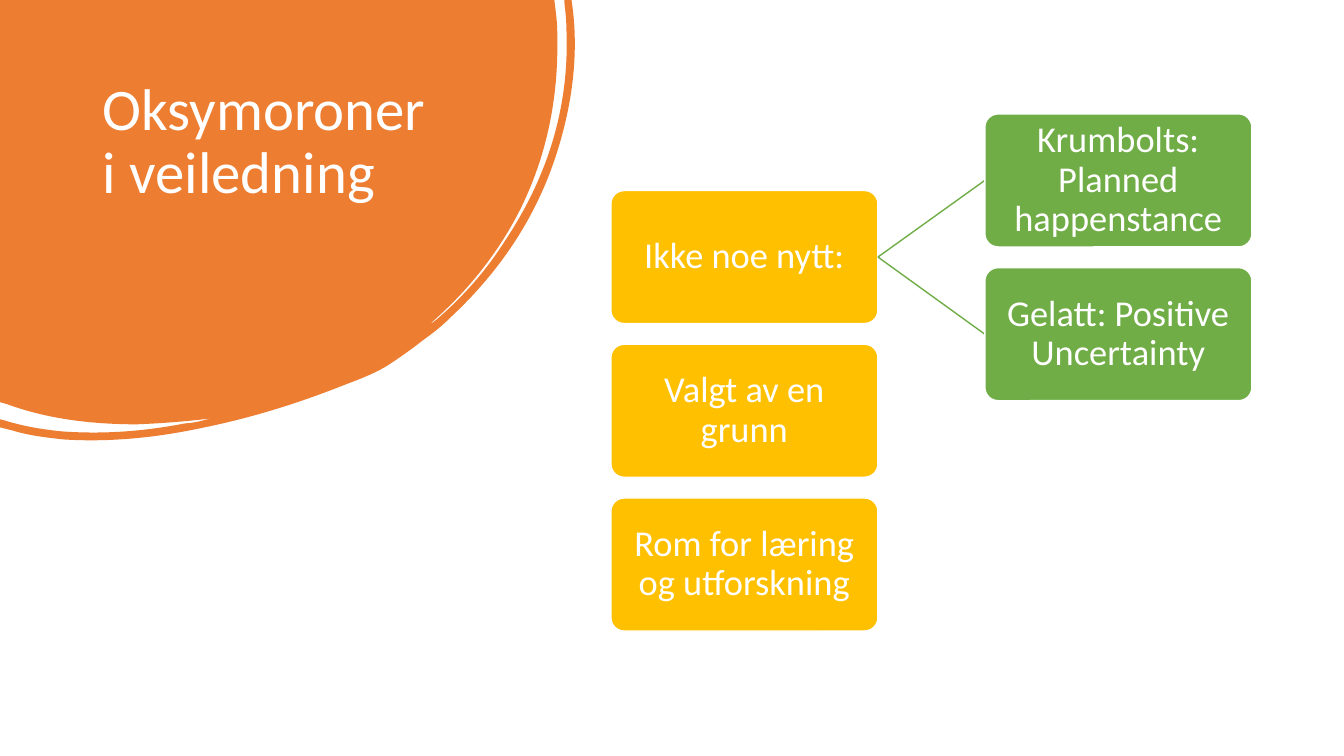
from lxml.etree import SubElement
from pptx import Presentation
from pptx.dml.color import RGBColor
from pptx.enum.shapes import MSO_CONNECTOR, MSO_SHAPE
from pptx.enum.text import MSO_ANCHOR as Anchor, MSO_AUTO_SIZE as AutoSize, PP_ALIGN as Align
from pptx.oxml.ns import qn
from pptx.util import Pt

PX = 9144  # EMU per px, 100 px to the inch
FONT = "Calibri"
WHITE = RGBColor(0xFF, 0xFF, 0xFF)
ORANGE = RGBColor(0xED, 0x7D, 0x31)
YELLOW = RGBColor(0xFF, 0xC0, 0x00)
GREEN = RGBColor(0x70, 0xAD, 0x47)

BOX_WIDTH, BOX_HEIGHT = 265, 132
TOPIC_LEFT, TOPIC_TOP, LAST_TOPIC_TOP = 606, 189, 494
EXAMPLE_LEFT, EXAMPLE_TOP = 977, 113
TOPICS = ["Ikke noe nytt:", "Valgt av en grunn", "Rom for læring og utforskning"]
EXAMPLES = ["Krumbolts: Planned happenstance", "Gelatt: Positive Uncertainty"]
ROW_PITCH = (LAST_TOPIC_TOP - TOPIC_TOP) / (len(TOPICS) - 1)

# Each step is one point (a line) or three points (a cubic curve).
BLOB_SIZE = (571, 437)
BLOB_START = (0, 0)
BLOB_STEPS = [
    [(550, 0)],
    [(552, 17)],
    [(553, 26), (553, 36), (553, 45)],
    [(553, 101), (542, 154), (518, 204)],
    [(496, 249), (465, 288), (427, 321)],
    [(429, 321), (430, 319), (432, 318)],
    [(459, 295), (482, 269), (501, 239)],
    [(543, 176), (565, 107), (562, 30)],
    [(562, 21), (561, 12), (560, 3)],
    [(560, 0)],
    [(567, 0)],
    [(568, 7)],
    [(574, 54), (568, 102), (553, 150)],
    [(533, 214), (497, 268), (448, 314)],
    [(439, 323), (429, 331), (419, 338)],
    [(409, 346), (399, 353), (387, 361)],
    [(375, 369), (360, 375), (344, 381)],
    [(299, 399), (252, 414), (203, 424)],
    [(157, 434), (110, 439), (63, 436)],
    [(45, 434), (28, 432), (12, 427)],
    [(0, 424)],
    [(0, 416)],
    [(4, 417)],
    [(23, 423), (42, 426), (61, 428)],
    [(103, 431), (143, 428), (184, 420)],
    [(189, 420), (193, 419), (198, 418)],
    [(202, 417), (206, 416), (210, 415)],
    [(186, 418), (161, 420), (136, 421)],
    [(92, 421), (48, 416), (7, 401)],
    [(0, 399)],
]


def px(*lengths):
    return [round(length * PX) for length in lengths]


def bend_lines(outline, steps):
    """Turn the line to the end of each three-point step into a cubic curve."""
    for line, step in zip(outline.findall(qn("a:lnTo")), steps):
        if len(step) == 3:
            curve = outline.makeelement(qn("a:cubicBezTo"))
            for point in step:
                x, y = px(*point)
                SubElement(curve, qn("a:pt"), x=str(x), y=str(y))
            outline.replace(line, curve)


def add_blob(slide):
    builder = slide.shapes.build_freeform(*px(*BLOB_START))
    builder.add_line_segments([px(*step[-1]) for step in BLOB_STEPS], close=True)
    blob = builder.convert_to_shape()
    blob.width, blob.height = px(*BLOB_SIZE)
    outline = blob.element.find(".//" + qn("a:path"))
    outline.set("w", str(blob.width))
    outline.set("h", str(blob.height))
    bend_lines(outline, BLOB_STEPS)
    blob.shadow.inherit = False
    blob.fill.solid()
    blob.fill.fore_color.rgb = ORANGE
    blob.line.fill.background()
    return blob


def write_text(frame, text, size, align, anchor):
    frame.word_wrap = True
    frame.auto_size = AutoSize.NONE
    frame.vertical_anchor = anchor
    paragraph = frame.paragraphs[0]
    paragraph.alignment = align
    paragraph.line_spacing = 0.9
    run = paragraph.add_run()
    run.text = text
    run.font.name = FONT
    run.font.size = Pt(size)
    run.font.color.rgb = WHITE


def set_title(slide, text):
    title = slide.shapes.title
    title.left, title.top, title.width, title.height = px(92, 74, 352, 222)
    write_text(title.text_frame, text, 42, Align.LEFT, Anchor.TOP)
    return title


def add_box(slide, left, top, text, color):
    box = slide.shapes.add_shape(
        MSO_SHAPE.ROUNDED_RECTANGLE, *px(left, top, BOX_WIDTH, BOX_HEIGHT))
    box.adjustments[0] = 0.1
    box.shadow.inherit = False
    box.fill.solid()
    box.fill.fore_color.rgb = color
    box.line.color.rgb = WHITE
    box.line.width = Pt(1)
    frame = box.text_frame
    frame.margin_left, frame.margin_top, frame.margin_right, frame.margin_bottom = px(2, 2, 2, 2)
    write_text(frame, text, 26, Align.CENTER, Anchor.MIDDLE)


def add_branch(slide, start, end):
    branch = slide.shapes.add_connector(MSO_CONNECTOR.STRAIGHT, *px(*start, *end))
    branch.line.color.rgb = GREEN
    branch.line.width = Pt(1)
    SubElement(branch.element.spPr, qn("a:effectLst"))


def main():
    presentation = Presentation()
    presentation.slide_width, presentation.slide_height = px(1333.33, 750)
    slide = presentation.slides.add_slide(presentation.slide_layouts[5])

    title = set_title(slide, "Oksymoroner i veiledning")
    blob = add_blob(slide)
    title.element.addprevious(blob.element)  # keeps the title in front

    middle = BOX_HEIGHT // 2
    for row, text in enumerate(TOPICS):
        add_box(slide, TOPIC_LEFT, TOPIC_TOP + row * ROW_PITCH, text, YELLOW)
    for row, text in enumerate(EXAMPLES):
        top = EXAMPLE_TOP + row * ROW_PITCH
        add_branch(slide, (TOPIC_LEFT + BOX_WIDTH, TOPIC_TOP + middle),
                   (EXAMPLE_LEFT, top + middle))
        add_box(slide, EXAMPLE_LEFT, top, text, GREEN)

    presentation.save("out.pptx")


if __name__ == "__main__":
    main()
